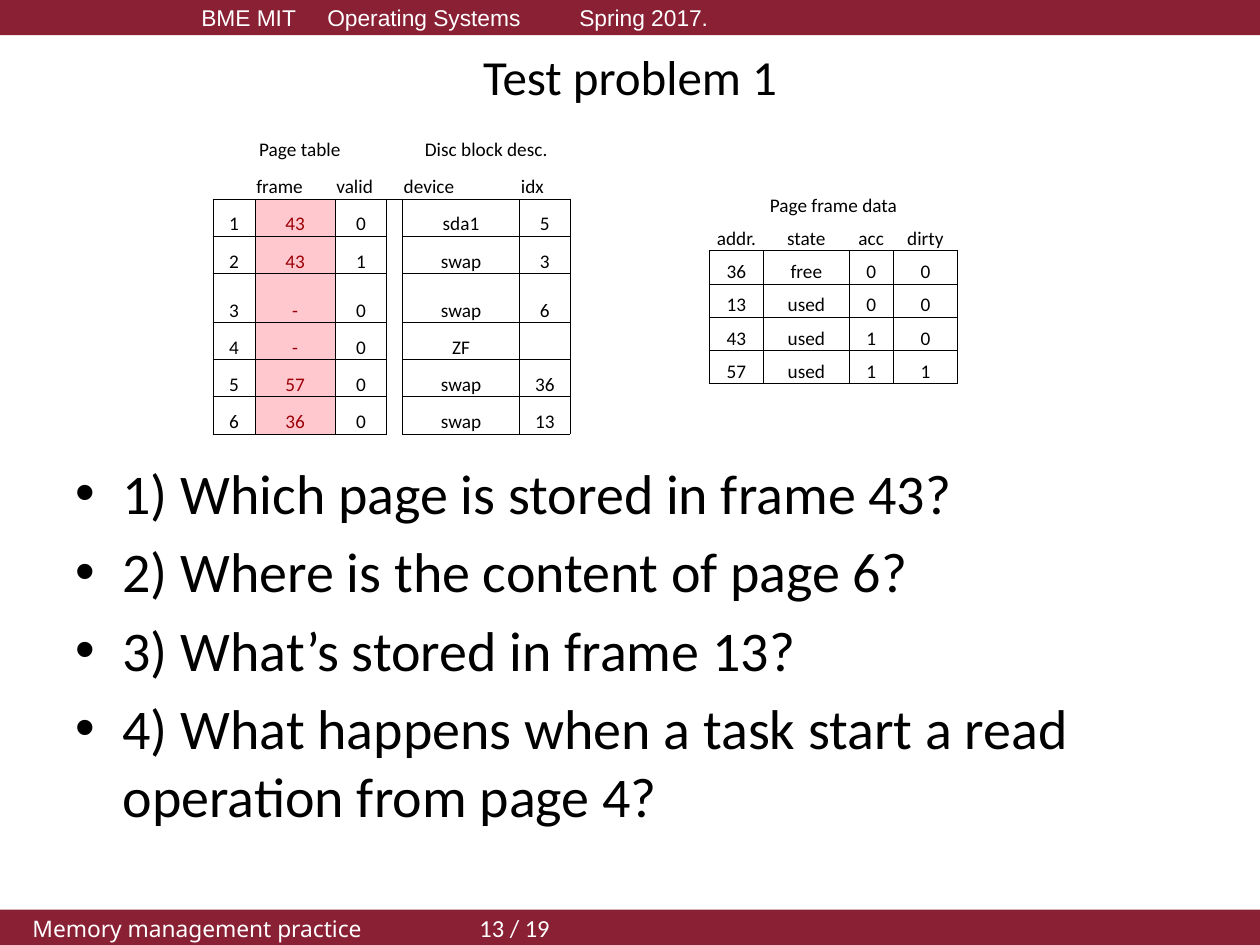
import pptx
import pptx.dml.color
import pptx.enum.shapes
import pptx.enum.text
import pptx.oxml
import pptx.util

COLUMNS, ROWS = 100, 75
ANCHOR = pptx.enum.text.MSO_ANCHOR
ALIGN = pptx.enum.text.PP_ALIGN
NAMESPACE = 'xmlns:a="http://schemas.openxmlformats.org/drawingml/2006/main"'
PLAIN_TABLE_STYLE = "{2D5ABB26-0587-4C30-8999-92F81FD0307C}"


def color(hex_string):
    return pptx.dml.color.RGBColor.from_string(hex_string)


class SlideBuilder:
    """Draws on one slide; lengths are columns and rows of a 100 by 75 grid."""

    font = "Calibri"
    black, white, burgundy = "000000", "FFFFFF", "892034"
    mark_fill, mark_text = "FFC7CE", "9C0006"

    def __init__(self, deck):
        self.unit_x = deck.slide_width / COLUMNS
        self.unit_y = deck.slide_height / ROWS
        self.slide = deck.slides.add_slide(deck.slide_layouts[6])

    def x(self, columns):
        return pptx.util.Emu(round(columns * self.unit_x))

    def y(self, rows):
        return pptx.util.Emu(round(rows * self.unit_y))

    def place(self, left, top, width, height):
        return self.x(left), self.y(top), self.x(width), self.y(height)

    def span(self, para, text, size, hex_string, font=None):
        span = para.add_run()
        span.text = text
        span.font.size = pptx.util.Pt(size)
        span.font.name = font or self.font
        span.font.color.rgb = color(hex_string)

    def indent(self, para, left, first=0):
        properties = para._p.get_or_add_pPr()
        properties.set("marL", str(self.x(left)))
        properties.set("indent", str(self.x(first)))
        return properties

    def bar(self, top, height, indent, spans):
        """Full-width band; spans are (text, size, font)."""
        bar = self.slide.shapes.add_shape(
            pptx.enum.shapes.MSO_SHAPE.RECTANGLE, *self.place(0, top, COLUMNS, height))
        bar.shadow.inherit = False
        bar.fill.solid()
        bar.fill.fore_color.rgb = color(self.burgundy)
        bar.line.fill.background()
        bar.text_frame.vertical_anchor = ANCHOR.MIDDLE
        para = bar.text_frame.paragraphs[0]
        para.alignment = ALIGN.LEFT
        self.indent(para, indent)
        for text, size, font in spans:
            self.span(para, text, size, self.white, font)

    def text_frame(self, *grid_area):
        frame = self.slide.shapes.add_textbox(*self.place(*grid_area)).text_frame
        frame.word_wrap = True
        return frame

    def title(self, text, *grid_area):
        frame = self.text_frame(*grid_area)
        frame.vertical_anchor = ANCHOR.MIDDLE
        para = frame.paragraphs[0]
        para.alignment = ALIGN.CENTER
        self.span(para, text, 28, self.black)

    def bullets(self, lines, *grid_area):
        frame = self.text_frame(*grid_area)
        for number, line in enumerate(lines):
            para = frame.add_paragraph() if number else frame.paragraphs[0]
            properties = self.indent(para, 3.75, -3.75)
            for xml in (f'<a:buFont {NAMESPACE} typeface="Arial"/>',
                        f'<a:buChar {NAMESPACE} char="•"/>'):
                properties.append(pptx.oxml.parse_xml(xml))
            if number:
                para.space_before = pptx.util.Pt(6.4)
            self.span(para, line, 32, self.black)

    def border(self, cell):
        properties = cell._tc.get_or_add_tcPr()
        for side in "LRTB":
            properties.append(pptx.oxml.parse_xml(
                f'<a:ln{side} {NAMESPACE} w="6350"><a:solidFill>'
                f'<a:srgbClr val="{self.black}"/></a:solidFill></a:ln{side}>'))

    def cell(self, cell, text, align, bordered, marked):
        cell.margin_left = cell.margin_right = cell.margin_top = self.x(0.1)
        cell.margin_bottom = 0
        cell.vertical_anchor = ANCHOR.BOTTOM
        if bordered:
            self.border(cell)
        if marked:
            cell.fill.solid()
            cell.fill.fore_color.rgb = color(self.mark_fill)
        else:
            cell.fill.background()
        para = cell.text_frame.paragraphs[0]
        para.alignment = align
        if text:
            self.span(para, text, 11, self.mark_text if marked else self.black)
        else:
            para._p.get_or_add_endParaRPr().set("sz", "1100")

    def table(self, left, top, widths, heights, values, merges,
              header_align=ALIGN.CENTER, gap=None, marked=None):
        """Two open heading rows, then bordered rows; column gap has no borders."""
        table = self.slide.shapes.add_table(
            len(heights), len(widths),
            *self.place(left, top, sum(widths), sum(heights))).table
        table._tbl.tblPr.find(pptx.oxml.ns.qn("a:tableStyleId")).text = PLAIN_TABLE_STYLE
        table.first_row = table.horz_banding = False
        for column, width in zip(table.columns, widths):
            column.width = self.x(width)
        for row, height in zip(table.rows, heights):
            row.height = self.y(height)
        for r, row_values in enumerate(values):
            for c, text in enumerate(row_values):
                in_body = r > 1
                self.cell(table.cell(r, c), text,
                          header_align if r == 1 else ALIGN.CENTER,
                          in_body and c != gap, in_body and c == marked)
        for r, first, last in merges:
            table.cell(r, first).merge(table.cell(r, last))


def main():
    deck = pptx.Presentation()
    deck.slide_width = pptx.util.Inches(10)
    deck.slide_height = pptx.util.Inches(7.5)
    page = SlideBuilder(deck)

    bar_height = 2.8
    page.bar(0, bar_height, 15,
             [("BME MIT\tOperating Systems\tSpring 2017.", 13, "Arial")])
    page.bar(ROWS - bar_height, bar_height, 1.6,
             [("Memory management practice\t\t ", 13, "Noto Sans"),
              ("13 / 19", 14, "Calibri")])
    page.title("Test problem 1", 5, 3, 90, 6.1)

    page_rows = [
        ("Page table", "", "", "", "Disc block desc.", ""),
        ("", "frame", "valid", "", "device", "idx"),
        ("1", "43", "0", "", "sda1", "5"),
        ("2", "43", "1", "", "swap", "3"),
        ("3", "-", "0", "", "swap", "6"),
        ("4", "-", "0", "", "ZF", ""),
        ("5", "57", "0", "", "swap", "36"),
        ("6", "36", "0", "", "swap", "13"),
    ]
    row_height = 2.95
    page.table(16.9, 9.9, [3.35, 6.35, 4.1, 1.25, 9.3, 4],
               [row_height] * 4 + [3.9] + [row_height] * 3, page_rows,
               [(0, 0, 2), (0, 4, 5), (1, 2, 3)],
               header_align=ALIGN.LEFT, gap=3, marked=1)

    frame_rows = [
        ("Page frame data", "", "", ""),
        ("addr.", "state", "acc", "dirty"),
        ("36", "free", "0", "0"),
        ("13", "used", "0", "0"),
        ("43", "used", "1", "0"),
        ("57", "used", "1", "1"),
    ]
    page.table(56.3, 14.65, [4.3, 6.8, 3.5, 5.1], [2.63] * len(frame_rows),
               frame_rows, [(0, 0, 3)])

    page.bullets(["1) Which page is stored in frame 43?",
                  "2) Where is the content of page 6?",
                  "3) What’s stored in frame 13?",
                  "4) What happens when a task start a read operation from page 4?"],
                 5, 35.9, 90, 36.2)
    deck.save("out.pptx")


if __name__ == "__main__":
    main()
